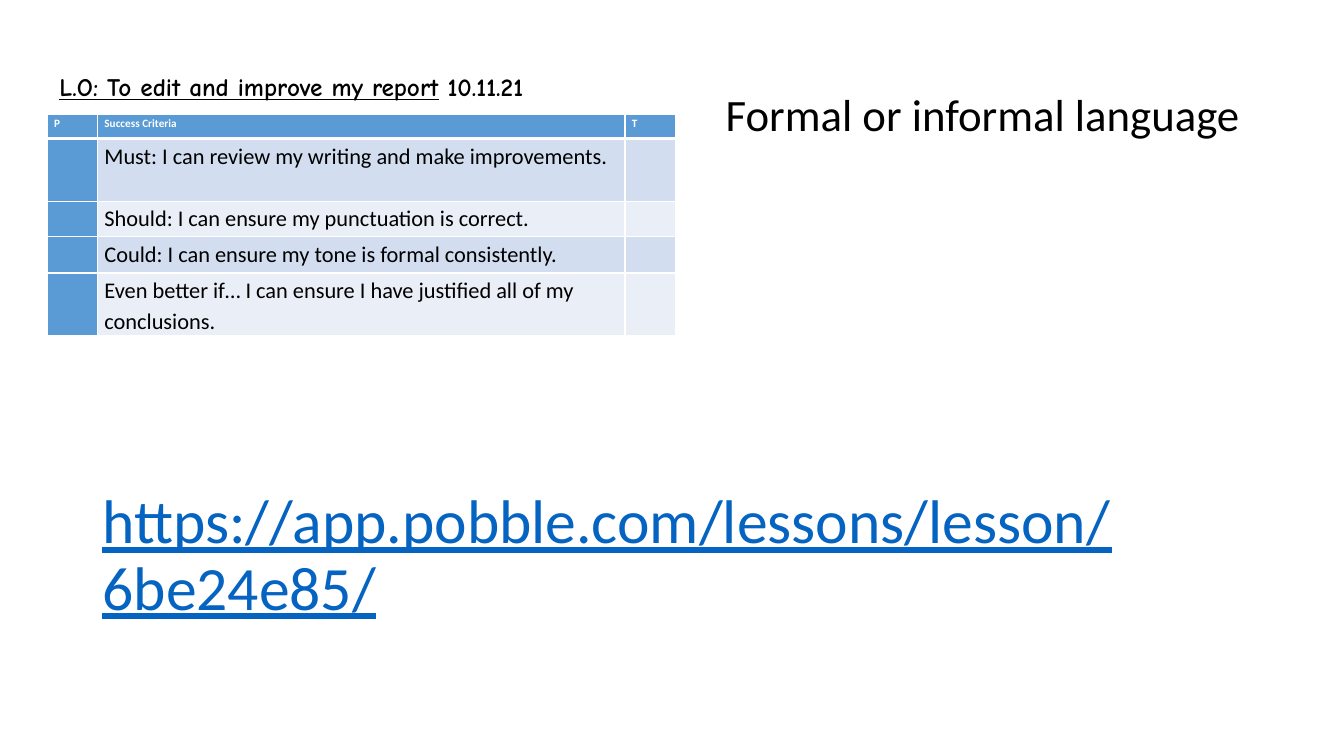
from dataclasses import dataclass

from lxml.etree import SubElement
from pptx import Presentation
from pptx.dml.color import RGBColor as Color
from pptx.enum.text import MSO_ANCHOR as Anchor, MSO_AUTO_SIZE as AutoSize, PP_ALIGN as Align
from pptx.oxml.ns import qn
from pptx.util import Emu, Inches, Pt


@dataclass(frozen=True)
class Theme:
    black: str = "000000"
    white: str = "FFFFFF"
    link: str = "0563C1"
    accent: str = "5B9BD5"
    bands: tuple = ("D2DEEF", "EAEFF7")
    body_font: str = "Calibri"
    objective_font: str = "Comic Neue"
    link_size: int = 44
    prompt_size: int = 32
    objective_size: int = 18
    criteria_size: int = 16
    header_size: int = 8
    rule: int = 1
    header_rule: int = 3


THEME = Theme()
GRID_COLUMNS, GRID_ROWS = 160, 90
SLIDE_WIDTH, SLIDE_HEIGHT = Inches(13.33), Inches(7.5)
HEADER = ("P", "Success Criteria", "T")
CRITERIA = (
    ("Must: I can review my writing and make improvements.", 2),
    ("Should: I can ensure my punctuation is correct.", 2),
    ("Could: I can ensure my tone is formal consistently.", 0),
    ("Even better if… I can ensure I have justified all of my conclusions.", 0),
)
COLUMN_WIDTHS = (6, 62.8, 6)
ROW_HEIGHTS = (2.9, 7.5, 4.2, 4.3, 7.5)


def across(columns):
    return Emu(round(SLIDE_WIDTH * columns / GRID_COLUMNS))


def down(rows):
    return Emu(round(SLIDE_HEIGHT * rows / GRID_ROWS))


def place(box):
    left, top, width, height = box
    return across(left), down(top), across(width), down(height)


def add_run(paragraph, text, size, color=THEME.black, name=THEME.body_font, bold=False, underline=False):
    run = paragraph.add_run()
    run.text = text
    font = run.font
    font.size, font.name, font.bold, font.underline = Pt(size), name, bold, underline
    font.color.rgb = Color.from_string(color)


def add_lesson_link(slide, box):
    title = slide.shapes.title
    title.left, title.top, title.width, title.height = place(box)
    frame = title.text_frame
    frame.word_wrap = True
    frame.auto_size = AutoSize.NONE
    frame.vertical_anchor = Anchor.MIDDLE
    paragraph = frame.paragraphs[0]
    paragraph.alignment = Align.LEFT
    paragraph.line_spacing = 0.9
    add_run(paragraph, "https://app.pobble.com/lessons/lesson/6be24e85/",
            THEME.link_size, THEME.link, underline=True)


def add_line_of_text(slide, box, anchor):
    frame = slide.shapes.add_textbox(*place(box)).text_frame
    frame.word_wrap = False
    frame.auto_size = AutoSize.SHAPE_TO_FIT_TEXT
    frame.vertical_anchor = anchor
    return frame.paragraphs[0]


def add_objective(slide, box):
    paragraph = add_line_of_text(slide, box, Anchor.MIDDLE)
    for text, underline in (("L.O: To edit and improve my report", True), (" 10.11.21", False)):
        add_run(paragraph, text, THEME.objective_size, name=THEME.objective_font,
                bold=True, underline=underline)


def add_prompt(slide, box):
    paragraph = add_line_of_text(slide, box, Anchor.TOP)
    add_run(paragraph, "Formal or informal language", THEME.prompt_size)


def style_cell(cell, fill, bottom_rule=THEME.rule):
    cell.margin_left = cell.margin_right = Inches(0.07)
    cell.margin_top = cell.margin_bottom = 0
    properties = cell._tc.get_or_add_tcPr()
    for side in "LRTB":
        width = bottom_rule if side == "B" else THEME.rule
        line = SubElement(properties, qn(f"a:ln{side}"), w=str(Pt(width)))
        SubElement(SubElement(line, qn("a:solidFill")), qn("a:srgbClr"), val=THEME.white)
    cell.fill.solid()
    cell.fill.fore_color.rgb = Color.from_string(fill)
    paragraph = cell.text_frame.paragraphs[0]
    paragraph.line_spacing = 1.15
    return paragraph


def add_blank(paragraph):
    SubElement(paragraph._p, qn("a:endParaRPr"), sz=str(THEME.header_size * 100))


def add_success_criteria(slide, box):
    table = slide.shapes.add_table(len(ROW_HEIGHTS), len(COLUMN_WIDTHS), *place(box)).table
    for column, width in zip(table.columns, COLUMN_WIDTHS):
        column.width = across(width)
    for row, height in zip(table.rows, ROW_HEIGHTS):
        row.height = down(height)
    for column, text in enumerate(HEADER):
        paragraph = style_cell(table.cell(0, column), THEME.accent, THEME.header_rule)
        add_run(paragraph, text, THEME.header_size, THEME.white, bold=True)
    for row, (text, gap) in enumerate(CRITERIA, 1):
        band = THEME.bands[(row - 1) % 2]
        add_blank(style_cell(table.cell(row, 0), THEME.accent))
        paragraph = style_cell(table.cell(row, 1), band)
        paragraph.space_after = Pt(gap)
        add_run(paragraph, text, THEME.criteria_size)
        add_blank(style_cell(table.cell(row, 2), band))


def main():
    presentation = Presentation()
    presentation.slide_width, presentation.slide_height = SLIDE_WIDTH, SLIDE_HEIGHT
    slide = presentation.slides.add_slide(presentation.slide_layouts[5])
    add_lesson_link(slide, (11, 57.6, 138, 17.4))
    add_success_criteria(slide, (5.6, 13.6, sum(COLUMN_WIDTHS), sum(ROW_HEIGHTS)))
    add_objective(slide, (5.9, 7.9, 70.8, 4.8))
    add_prompt(slide, (85.2, 9.7, 64.3, 7.7))
    presentation.save("out.pptx")


if __name__ == "__main__":
    main()
